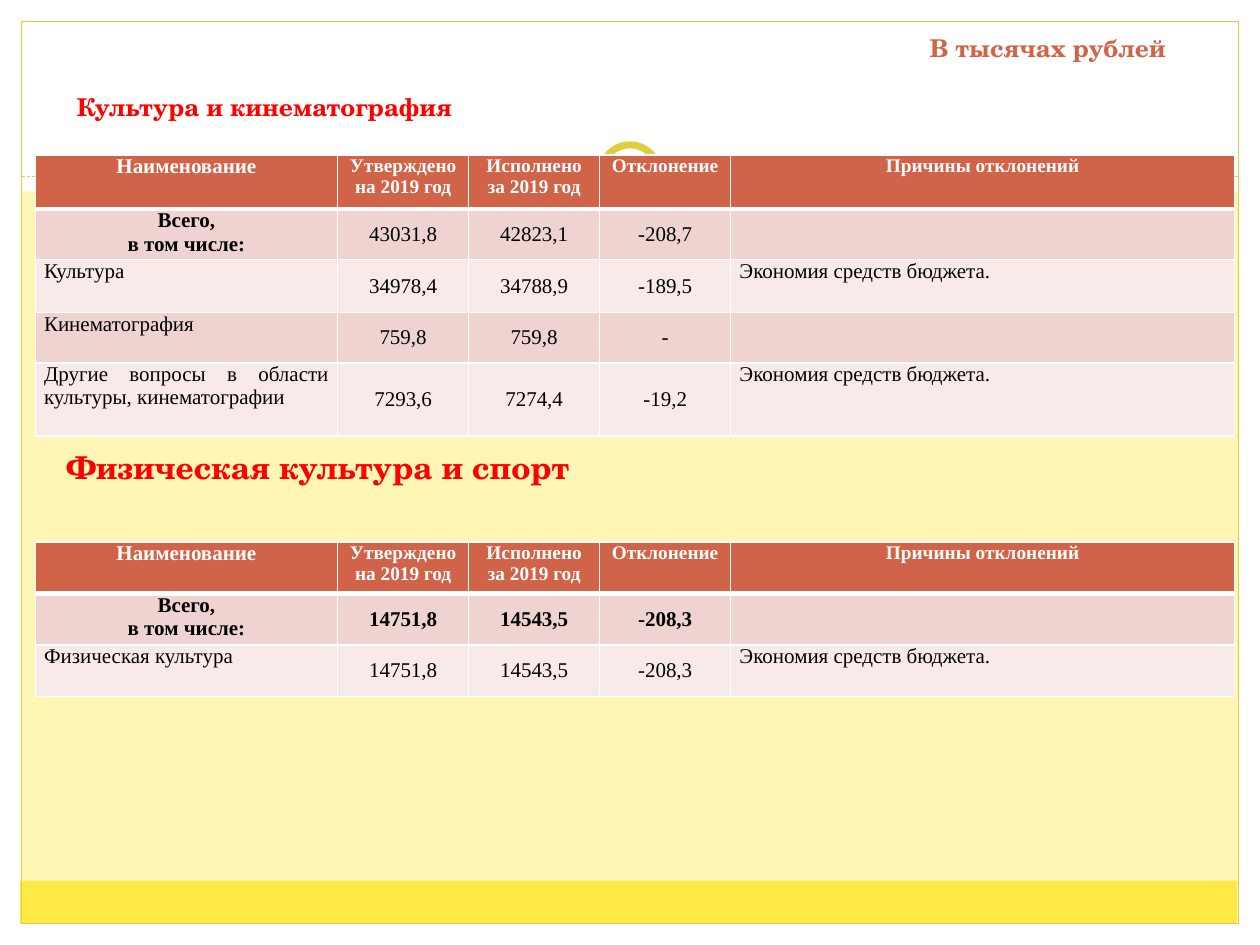
"""Budget execution slide: culture and sport tables, in thousand roubles."""
from dataclasses import dataclass
from typing import Optional

from lxml.etree import SubElement
from pptx import Presentation
from pptx.dml.color import RGBColor as Rgb
from pptx.enum.dml import MSO_LINE as Dash
from pptx.enum.shapes import MSO_CONNECTOR as Connector, MSO_SHAPE as Shape
from pptx.enum.text import MSO_ANCHOR as Anchor, PP_ALIGN as Align
from pptx.oxml import parse_xml
from pptx.oxml.ns import nsdecls, qn
from pptx.util import Inches, Pt


@dataclass(frozen=True)
class Theme:
    page: str = "FFF6B5"
    white: str = "FFFFFF"
    footer: str = "FFE947"
    frame: str = "E1CE3F"
    accent: str = "D16349"
    section: str = "FF0000"
    ink: str = "000000"
    bands: tuple = ("EED3D0", "F7EAE9")
    heading_font: str = "TeX Gyre Schola"
    table_font: str = "Times New Roman"
    large: float = 18
    medium: float = 14
    body: float = 12
    header: float = 11


THEME = Theme()


@dataclass(frozen=True)
class Panel:
    box: tuple
    fill: Optional[str] = None
    line: Optional[str] = None
    weight: float = 0.75
    preset: Shape = Shape.RECTANGLE


@dataclass(frozen=True)
class Style:
    size: float
    color: str
    bold: bool = True
    font: str = THEME.table_font
    align: Align = Align.CENTER


@dataclass(frozen=True)
class Heading:
    text: str
    box: tuple
    style: Style
    wrap: bool = False


@dataclass(frozen=True)
class Budget:
    top: float
    heights: tuple
    rows: tuple
    bold_total: bool
    name_align: Align


LEFT = 0.28
COLUMNS = (2.4, 1.04, 1.04, 1.04, 4)
TOTAL = "Всего,\nв том числе:"
SAVING = "Экономия средств бюджета."
HEADER = ("Наименование", "Утверждено на 2019 год", "Исполнено за 2019 год",
          "Отклонение", "Причины отклонений")

PANELS = (
    Panel((0, 7.33, 10, 0.17), THEME.white),
    Panel((0, 0, 10, 1.52), THEME.white),
    Panel((0, 0, 0.17, 7.5), THEME.white),
    Panel((9.83, 0, 0.17, 7.5), THEME.white),
    Panel((0.16, 6.99, 9.66, 0.34), THEME.footer),
    Panel((0.17, 0.17, 9.66, 7.16), line=THEME.frame),
)
RINGS = (
    Panel((4.67, 1.05, 0.67, 0.67), THEME.white, preset=Shape.OVAL),
    Panel((4.77, 1.15, 0.46, 0.46), THEME.white, THEME.frame, 4, Shape.OVAL),
)


def heading_style(size: float, color: str) -> Style:
    """Return the bold left-aligned heading style."""
    return Style(size, color, font=THEME.heading_font, align=Align.LEFT)


CULTURE_TITLE = Heading("Культура и кинематография", (0.51, 0.68, 3.23, 0.34),
                        heading_style(THEME.medium, THEME.section))
HEADINGS = (
    Heading("В тысячах рублей", (7.28, 0.21, 2.27, 0.47),
            heading_style(THEME.medium, THEME.accent), True),
    Heading("Физическая культура и спорт", (0.43, 3.51, 4.22, 0.4),
            heading_style(THEME.large, THEME.section)),
)
BUDGETS = (
    Budget(4.3, (0.41, 0.41, 0.41), (
        (TOTAL, "14751,8", "14543,5", "-208,3", ""),
        ("Физическая культура", "14751,8", "14543,5", "-208,3", SAVING),
    ), True, Align.LEFT),
    Budget(1.23, (0.43, 0.38, 0.42, 0.4, 0.58), (
        (TOTAL, "43031,8", "42823,1", "-208,7", ""),
        ("Культура", "34978,4", "34788,9", "-189,5", SAVING),
        ("Кинематография", "759,8", "759,8", "-", ""),
        ("Другие вопросы в области культуры, кинематографии",
         "7293,6", "7274,4", "-19,2", SAVING),
    ), False, Align.JUSTIFY),
)


def inches(box: tuple) -> list:
    """Convert a box to slide lengths."""
    return [Inches(value) for value in box]


def write(frame, text: str, style: Style) -> None:
    """Fill a text frame with one styled run per line."""
    for index, line in enumerate(text.split("\n")):
        paragraph = frame.add_paragraph() if index else frame.paragraphs[0]
        paragraph.alignment = style.align
        run = paragraph.add_run()
        run.text = line
        run.font.name, run.font.size = style.font, Pt(style.size)
        run.font.bold = style.bold
        run.font.color.rgb = Rgb.from_string(style.color)


def draw_panel(slide, panel: Panel) -> None:
    """Draw one flat background shape."""
    shape = slide.shapes.add_shape(panel.preset, *inches(panel.box))
    shape.shadow.inherit = False
    if panel.fill:
        shape.fill.solid()
        shape.fill.fore_color.rgb = Rgb.from_string(panel.fill)
    else:
        shape.fill.background()
    if panel.line:
        shape.line.color.rgb = Rgb.from_string(panel.line)
        shape.line.width = Pt(panel.weight)
    else:
        shape.line.fill.background()


def draw_divider(slide) -> None:
    """Draw the dashed rule below the heading band."""
    rule = slide.shapes.add_connector(Connector.STRAIGHT, *inches((0.17, 1.4, 9.83, 1.4)))
    rule.line.color.rgb = Rgb.from_string(THEME.frame)
    rule.line.width = Pt(0.75)
    rule.line.dash_style = Dash.SQUARE_DOT
    SubElement(rule._element.spPr, qn("a:effectLst"))


def place_heading(shape, heading: Heading) -> None:
    """Position and fill a heading shape."""
    shape.left, shape.top, shape.width, shape.height = inches(heading.box)
    frame = shape.text_frame
    frame.word_wrap = heading.wrap
    frame.vertical_anchor = Anchor.TOP
    write(frame, heading.text, heading.style)


def set_borders(cell, top: float, bottom: float) -> None:
    """Give a cell white borders of the stated weights."""
    properties = cell._tc.get_or_add_tcPr()
    for index, (side, weight) in enumerate(zip("LRTB", (1, 1, top, bottom))):
        properties.insert(index, parse_xml(
            f'<a:ln{side} {nsdecls("a")} w="{Pt(weight)}"><a:solidFill>'
            f'<a:srgbClr val="{THEME.white}"/></a:solidFill></a:ln{side}>'))


def cell_style(budget: Budget, row: int, column: int) -> Style:
    """Choose the text style for a table position."""
    if row == 0:
        return Style(THEME.header if column else THEME.body, THEME.white)
    if column == 0:
        align = Align.CENTER if row == 1 else budget.name_align
        return Style(THEME.body, THEME.ink, row == 1, align=align)
    align = Align.LEFT if column == len(COLUMNS) - 1 else Align.CENTER
    return Style(THEME.body, THEME.ink, row == 1 and budget.bold_total, align=align)


def draw_budget(slide, budget: Budget) -> None:
    """Draw one budget table."""
    box = (LEFT, budget.top, sum(COLUMNS), sum(budget.heights))
    table = slide.shapes.add_table(len(budget.heights), len(COLUMNS), *inches(box)).table
    table.horz_banding = False
    for column, width in zip(table.columns, COLUMNS):
        column.width = Inches(width)
    for row, (height, texts) in enumerate(zip(budget.heights, (HEADER, *budget.rows))):
        table.rows[row].height = Inches(height)
        for column, text in enumerate(texts):
            cell = table.cell(row, column)
            cell.fill.solid()
            cell.fill.fore_color.rgb = Rgb.from_string(
                THEME.bands[(row - 1) % 2] if row else THEME.accent)
            set_borders(cell, 3 if row == 1 else 1, 1 if row else 3)
            if text:
                cell.margin_left = cell.margin_right = Inches(0.07)
                cell.margin_top = cell.margin_bottom = 0
                if row and 0 < column < len(COLUMNS) - 1:
                    cell.vertical_anchor = Anchor.MIDDLE
                write(cell.text_frame, text, cell_style(budget, row, column))


def main() -> None:
    """Build and save the slide."""
    deck = Presentation()
    deck.slide_width, deck.slide_height = Inches(10), Inches(7.5)
    slide = deck.slides.add_slide(deck.slide_layouts[5])
    slide.background.fill.solid()
    slide.background.fill.fore_color.rgb = Rgb.from_string(THEME.page)
    for panel in PANELS:
        draw_panel(slide, panel)
    draw_divider(slide)
    for ring in RINGS:
        draw_panel(slide, ring)
    title = slide.shapes.title
    slide.shapes._spTree.append(title._element)
    place_heading(title, CULTURE_TITLE)
    for heading in HEADINGS:
        place_heading(slide.shapes.add_textbox(*inches(heading.box)), heading)
    for budget in BUDGETS:
        draw_budget(slide, budget)
    deck.save("out.pptx")


if __name__ == "__main__":
    main()
